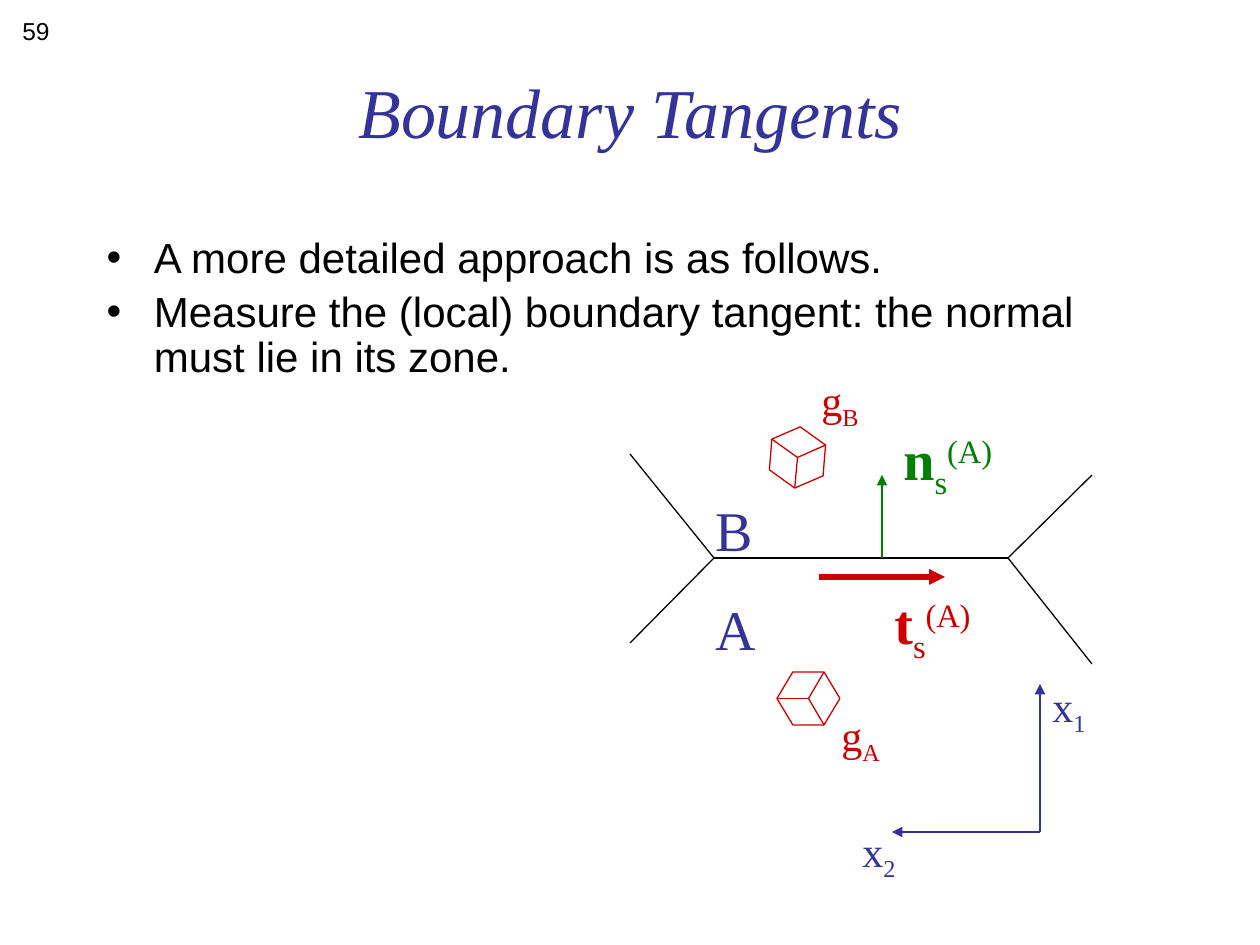
import math

import pptx
import pptx.dml.color
import pptx.enum.shapes
import pptx.enum.text
import pptx.oxml.ns
import pptx.util
from lxml import etree

EMU_PER_PX = 914400 / 126
BLACK, BLUE, GREEN, RED = "000000", "333399", "008000", "CC0000"
SERIF, SANS = "Times New Roman", "Arial"
SUB, SUPER = -25000, 30000


def px(length):
    """Turn pixels into EMU."""
    return pptx.util.Emu(round(length * EMU_PER_PX))


def rgb(code):
    """Turn a hex string into a colour."""
    return pptx.dml.color.RGBColor.from_string(code)


def style(font, face, size, color):
    """Set face, size and colour of a font."""
    font.name = face
    font.size = pptx.util.Pt(size)
    font.color.rgb = rgb(color)


def place(shape, box):
    """Move a shape to a box in pixels."""
    shape.left, shape.top, shape.width, shape.height = map(px, box)


def add_line(shapes, start, end, color, weight=0.75, arrow=False):
    """Draw a straight line, with an arrowhead at its end if asked."""
    line = shapes.add_connector(
        pptx.enum.shapes.MSO_CONNECTOR.STRAIGHT, *map(px, (*start, *end)))
    line.line.color.rgb = rgb(color)
    line.line.width = pptx.util.Pt(weight)
    if arrow:
        outline = line.line._get_or_add_ln()
        etree.SubElement(outline, pptx.oxml.ns.qn("a:tailEnd"), type="triangle")
    etree.SubElement(line._element.spPr, pptx.oxml.ns.qn("a:effectLst"))


def add_label(shapes, box, symbol, color, size, scripts=(), bold=False):
    """Write a symbol followed by its (text, baseline) scripts."""
    frame = shapes.add_textbox(*map(px, box)).text_frame
    frame.word_wrap = False
    paragraph = frame.paragraphs[0]
    style(paragraph.font, SERIF, size, color)
    base = paragraph.add_run()
    base.text = symbol
    if bold:
        base.font.bold = True
    for text, baseline in scripts:
        script = paragraph.add_run()
        script.text = text
        script._r.get_or_add_rPr().set("baseline", str(baseline))


def add_heading(slide, box, text):
    """Fill the title placeholder."""
    heading = slide.shapes.title
    place(heading, box)
    heading.text_frame.text = text
    font = heading.text_frame.paragraphs[0].font
    style(font, SERIF, 40, BLUE)
    font.italic = True


def add_steps(slide, box, steps):
    """Fill the body placeholder with bulleted steps."""
    body = slide.placeholders[1]
    place(body, box)
    frame = body.text_frame
    frame.auto_size = pptx.enum.text.MSO_AUTO_SIZE.NONE
    frame.text = "\n".join(steps)
    for index, paragraph in enumerate(frame.paragraphs):
        paragraph.line_spacing = 0.9
        paragraph.space_before = pptx.util.Pt(4.8 if index else 0)
        style(paragraph.font, SANS, 24, BLACK)


def add_page_number(slide, box, number):
    """Write the page number in the corner."""
    frame = slide.shapes.add_textbox(*map(px, box)).text_frame
    frame.word_wrap = True
    frame.text = number
    style(frame.paragraphs[0].font, SANS, 14, BLACK)


def add_boundary(slide, box):
    """Draw the grain boundary with its grains, normal and tangent."""
    shapes = slide.shapes
    left, top, width, height = box
    right, bottom, level = left + width, top + height, top + 140
    west, east = (left + 84, level), (right - 84, level)
    add_line(shapes, west, east, BLACK)
    for end, junction in (((left, top + 36), west), ((left, bottom - 21), west),
                          ((right, top + 57), east), ((right, bottom), east)):
        add_line(shapes, end, junction, BLACK)
    for grain, offset, span in (("B", 71, 63), ("A", 170, 66)):
        add_label(shapes, (left + 73, top + offset, span, 79), grain, BLUE, 32)

    scripts = (("s", SUB), ("(A)", SUPER))
    add_line(shapes, (left + 252, level), (left + 252, top + 57), GREEN, arrow=True)
    add_label(shapes, (left + 261, top, 122, 79), "n", GREEN, 32, scripts, True)
    add_line(shapes, (left + 189, level + 19), (left + 315, level + 19), RED, 3, True)
    add_label(shapes, (left + 252, top + 164, 110, 79), "t", RED, 32, scripts, True)


def add_crystal(slide, box, rotation, grain, label_offset):
    """Draw a crystal as a turned cube, with its orientation label."""
    left, top, width, height = box
    cube = slide.shapes.add_group_shape().shapes
    outline = cube.add_shape(pptx.enum.shapes.MSO_SHAPE.HEXAGON, *map(px, box))
    outline.adjustments[0] = 0.3
    outline.rotation = rotation
    outline.shadow.inherit = False
    outline.fill.background()
    outline.line.color.rgb = rgb(RED)
    outline.line.width = pptx.util.Pt(0.75)

    center_x, center_y = left + width / 2, top + height / 2
    cos, sin = math.cos(math.radians(rotation)), math.sin(math.radians(rotation))
    corner_x = width / 2 - 0.3 * height
    for x, y in ((-width / 2, 0), (corner_x, -height / 2), (corner_x, height / 2)):
        corner = (center_x + x * cos - y * sin, center_y + x * sin + y * cos)
        add_line(cube, (center_x, center_y), corner, RED)
    label_box = (left + label_offset[0], top + label_offset[1], 66, 63)
    add_label(slide.shapes, label_box, "g", RED, 24, ((grain, SUB),))


def add_axes(slide, box):
    """Draw the two sample axes with their labels."""
    left, top, width, height = box
    corner = (left + 190, top + 158)
    axes = (("1", (left + 190, top + 10), (left + 190, top)),
            ("2", (left + 42, top + 158), (left, top + height - 63)))
    for number, tip, label_at in axes:
        add_line(slide.shapes, corner, tip, BLUE, arrow=True)
        add_label(slide.shapes, (*label_at, 60, 63), "x", BLUE, 24, ((number, SUB),))


def main():
    """Build the slide and save it."""
    deck = pptx.Presentation()
    deck.slide_width, deck.slide_height = px(1260), px(945)
    slide = deck.slides.add_slide(deck.slide_layouts[1])
    add_heading(slide, (94, 32, 1072, 157), "Boundary Tangents")
    add_steps(slide, (94, 231, 1072, 157), (
        "A more detailed approach is as follows.",
        "Measure the (local) boundary tangent: the normal must lie in its zone."))
    add_boundary(slide, (630, 418, 462, 246))
    add_axes(slide, (850, 674, 250, 208))
    add_crystal(slide, (777, 672, 63, 53), 0, "A", (52, 31))
    add_crystal(slide, (766, 431, 63, 53), 35.6, "B", (43, -63))
    add_page_number(slide, (10, 10, 262, 63), "59")
    deck.save("out.pptx")


if __name__ == "__main__":
    main()
